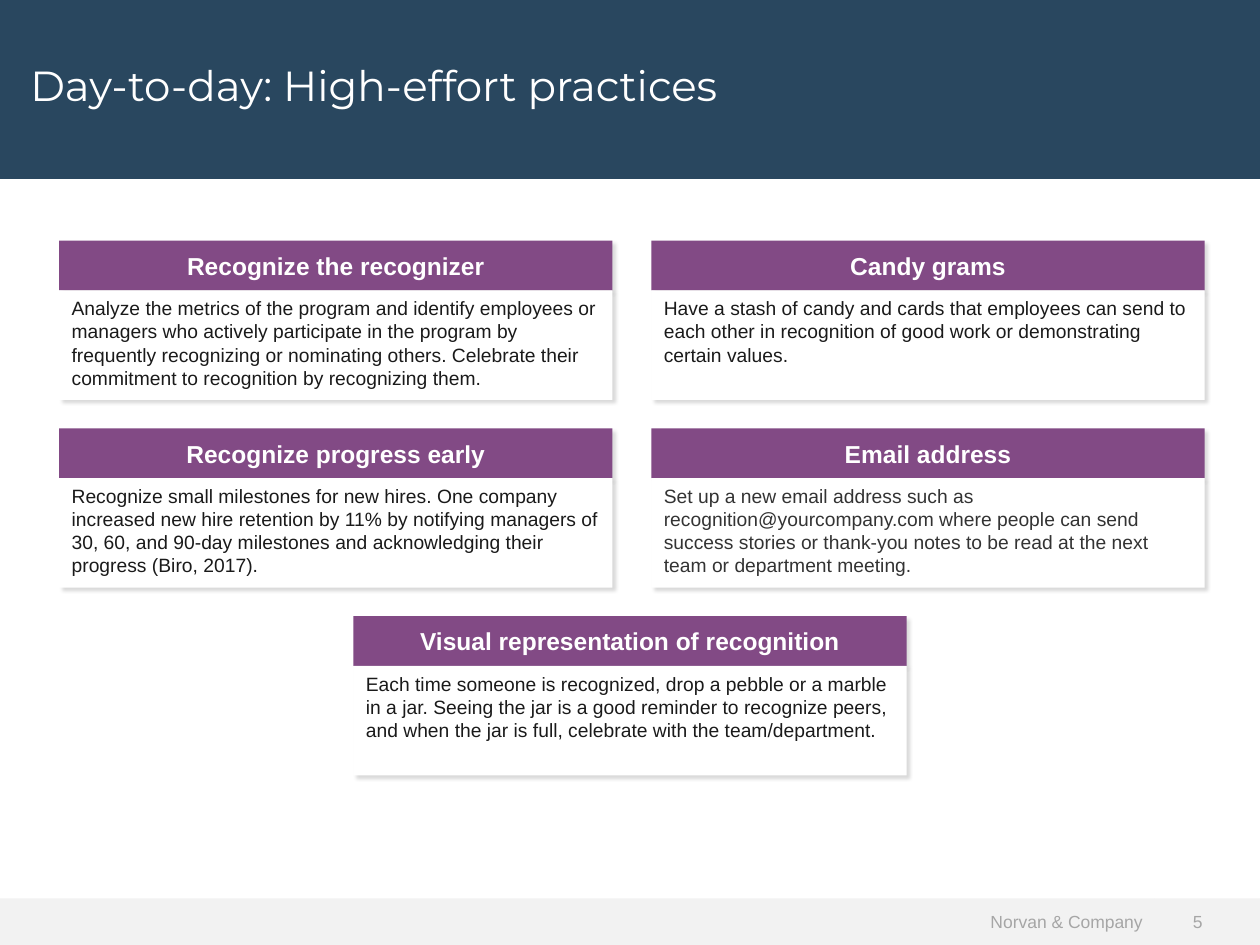
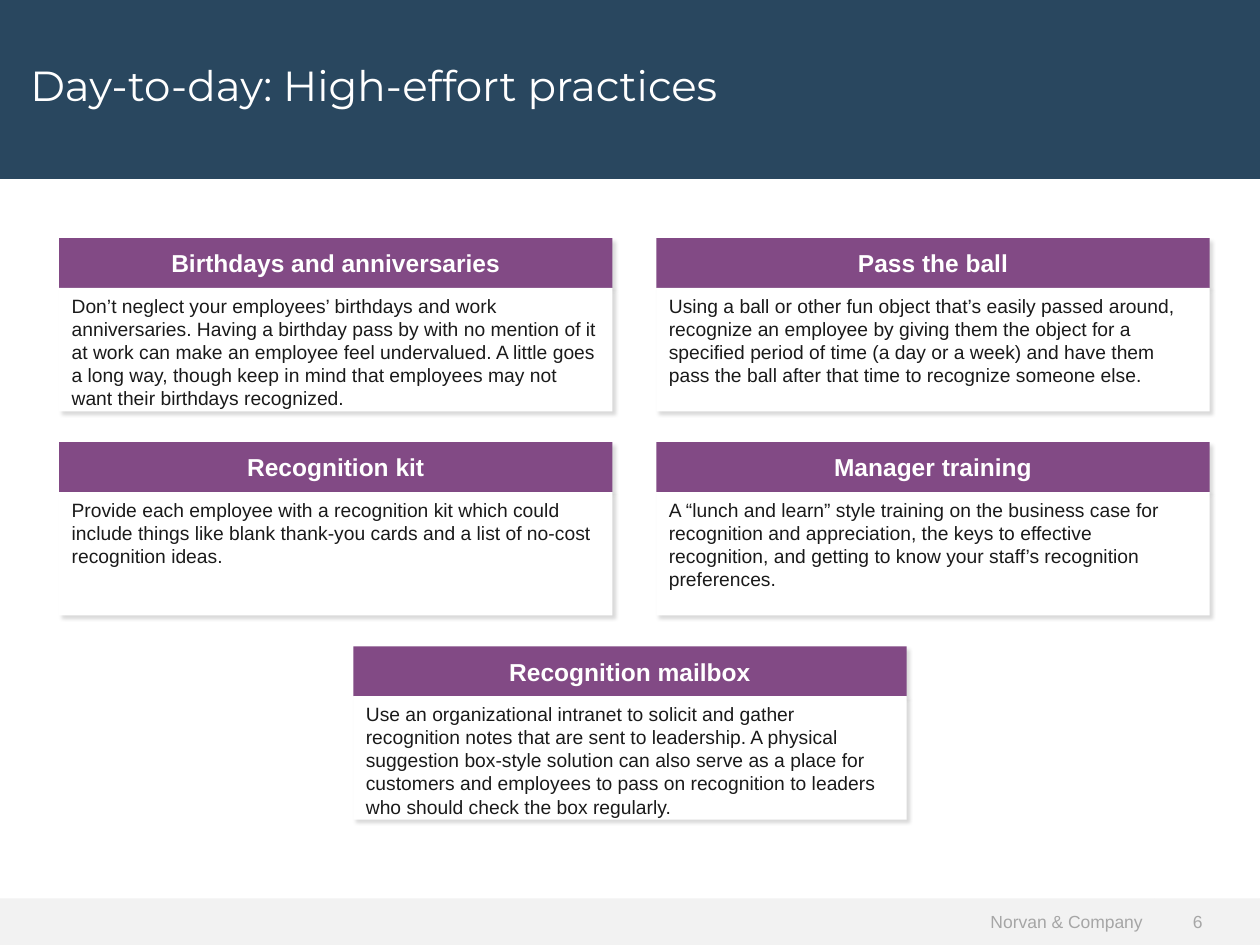
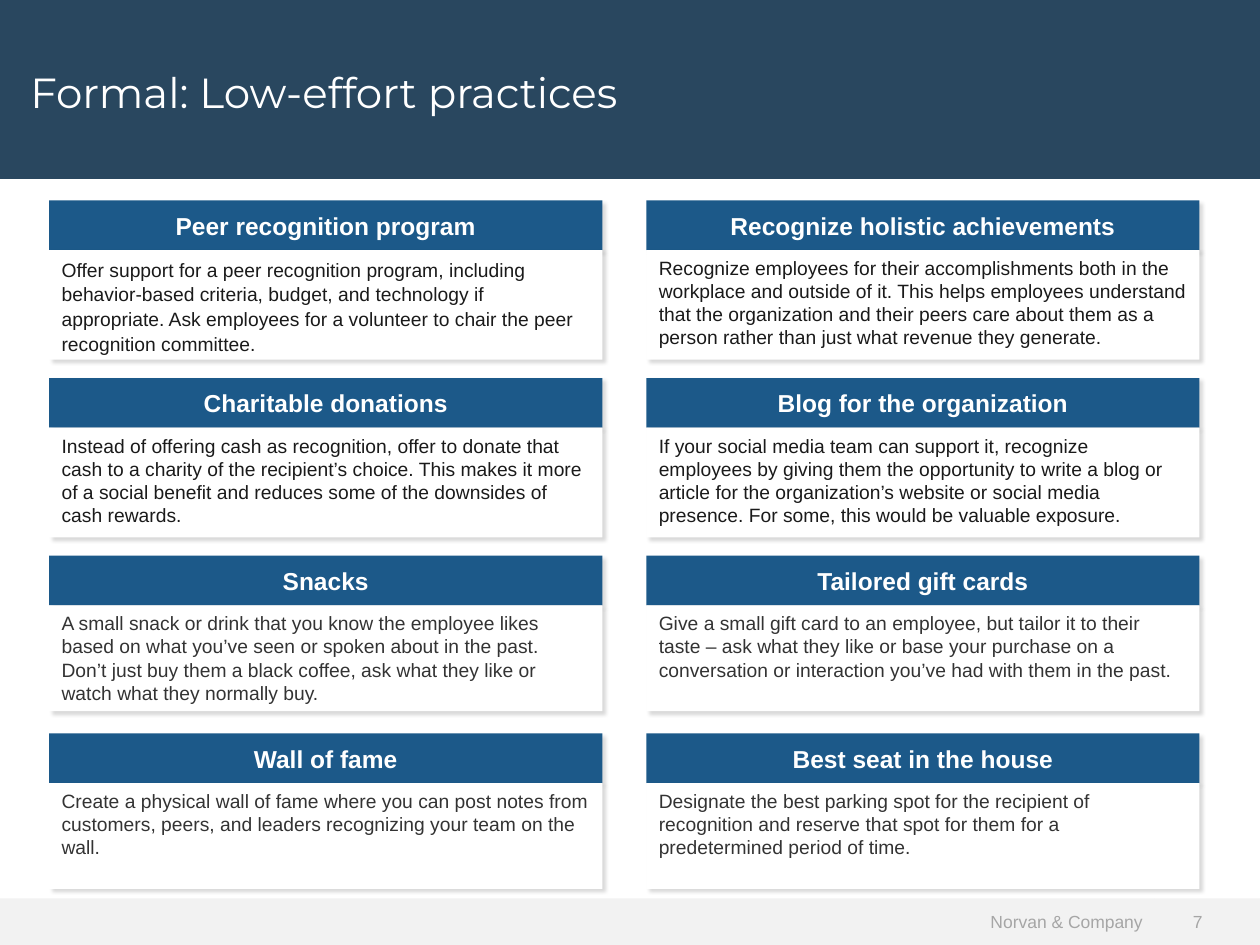
from dataclasses import dataclass

from lxml import etree
from pptx import Presentation
from pptx.dml.color import RGBColor
from pptx.enum.shapes import MSO_SHAPE
from pptx.enum.text import MSO_ANCHOR, MSO_AUTO_SIZE, PP_ALIGN
from pptx.oxml.ns import qn
from pptx.util import Inches, Pt

RECTANGLE = MSO_SHAPE.RECTANGLE
LEFT, CENTER, RIGHT = PP_ALIGN.LEFT, PP_ALIGN.CENTER, PP_ALIGN.RIGHT
TOP, MIDDLE = MSO_ANCHOR.TOP, MSO_ANCHOR.MIDDLE

COLORS = {
    "band": "29475F",
    "day_to_day": "824A85",
    "formal": "1C5989",
    "white": "FFFFFF",
    "footer": "F2F2F2",
    "footer_text": "A6A6A6",
    "ink": "1A1A1A",
    "soft_ink": "333333",
    "shadow": "000000",
}
TITLE_FONT, BODY_FONT = "Montserrat", "Arial"

SLIDE_WIDTH, SLIDE_HEIGHT = 10, 7.5
BAND_HEIGHT = 1.42
FOOTER_HEIGHT = 0.37
NUMBER_WIDTH = SLIDE_WIDTH / 12
CARD_WIDTH, HEADING_HEIGHT = 4.39, 0.395
FIRST_PAGE = 5
COMPANY = "Norvan & Company"


@dataclass
class Card:
    heading: str
    body: str
    ink: str = "ink"
    line_spacing: float = 1.0


@dataclass
class CardGrid:
    """Two columns of cards; an odd last card is centred on the slide."""
    left: float
    gap: float
    top: float
    pitch: float
    body_heights: tuple

    def place(self, index, count):
        row, column = divmod(index, 2)
        left = self.left + column * (CARD_WIDTH + self.gap)
        if index == count - 1 and column == 0:
            left = (SLIDE_WIDTH - CARD_WIDTH) / 2
        return left, self.top + row * self.pitch, self.body_heights[row]


@dataclass
class Page:
    title: str
    title_top: float
    accent: str
    grid: CardGrid
    cards: list


PAGES = [
    Page("Day-to-day: High-effort practices", 0.47, "day_to_day",
         CardGrid(0.47, 0.31, 1.91, 1.49, (0.87,) * 3), [
             Card("Recognize the recognizer",
                  "Analyze the metrics of the program and identify employees or managers who "
                  "actively participate in the program by frequently recognizing or nominating "
                  "others. Celebrate their commitment to recognition by recognizing them."),
             Card("Candy grams",
                  "Have a stash of candy and cards that employees can send to each other in "
                  "recognition of good work or demonstrating certain values."),
             Card("Recognize progress early",
                  "Recognize small milestones for new hires. One company increased new hire "
                  "retention by 11% by notifying managers of 30, 60, and 90-day milestones and "
                  "acknowledging their progress (Biro, 2017)."),
             Card("Email address",
                  "Set up a new email address such as recognition@yourcompany.com where people "
                  "can send success stories or thank-you notes to be read at the next team or "
                  "department meeting.", "soft_ink"),
             Card("Visual representation of recognition",
                  "Each time someone is recognized, drop a pebble or a marble in a jar. Seeing "
                  "the jar is a good reminder to recognize peers, and when the jar is full, "
                  "celebrate with the team/department."),
         ]),
    Page("Day-to-day: High-effort practices", 0.47, "day_to_day",
         CardGrid(0.47, 0.35, 1.89, 1.62, (0.98,) * 3), [
             Card("Birthdays and anniversaries",
                  "Don’t neglect your employees’ birthdays and work anniversaries. Having a "
                  "birthday pass by with no mention of it at work can make an employee feel "
                  "undervalued. A little goes a long way, though keep in mind that employees "
                  "may not want their birthdays recognized."),
             Card("Pass the ball",
                  "Using a ball or other fun object that’s easily passed around, recognize an "
                  "employee by giving them the object for a specified period of time (a day or "
                  "a week) and have them pass the ball after that time to recognize someone "
                  "else."),
             Card("Recognition kit",
                  "Provide each employee with a recognition kit which could include things like "
                  "blank thank-you cards and a list of no-cost recognition ideas."),
             Card("Manager training",
                  "A “lunch and learn” style training on the business case for recognition and "
                  "appreciation, the keys to effective recognition, and getting to know your "
                  "staff’s recognition preferences."),
             Card("Recognition mailbox",
                  "Use an organizational intranet to solicit and gather recognition notes that "
                  "are sent to leadership. A physical suggestion box-style solution can also "
                  "serve as a place for customers and employees to pass on recognition to "
                  "leaders who should check the box regularly."),
         ]),
    Page("Formal: Low-effort practices", 0.53, "formal",
         CardGrid(0.39, 0.35, 1.59, 1.41, (0.87, 0.87, 0.84, 0.84)), [
             Card("Peer recognition program",
                  "Offer support for a peer recognition program, including behavior-based "
                  "criteria, budget, and technology if appropriate. Ask employees for a "
                  "volunteer to chair the peer recognition committee.", line_spacing=1.07),
             Card("Recognize holistic achievements",
                  "Recognize employees for their accomplishments both in the workplace and "
                  "outside of it. This helps employees understand that the organization and "
                  "their peers care about them as a person rather than just what revenue they "
                  "generate."),
             Card("Charitable donations",
                  "Instead of offering cash as recognition, offer to donate that cash to a "
                  "charity of the recipient’s choice. This makes it more of a social benefit "
                  "and reduces some of the downsides of cash rewards."),
             Card("Blog for the organization",
                  "If your social media team can support it, recognize employees by giving them "
                  "the opportunity to write a blog or article for the organization’s website or "
                  "social media presence. For some, this would be valuable exposure."),
             Card("Snacks",
                  "A small snack or drink that you know the employee likes based on what you’ve "
                  "seen or spoken about in the past. Don’t just buy them a black coffee, ask "
                  "what they like or watch what they normally buy.", "soft_ink"),
             Card("Tailored gift cards",
                  "Give a small gift card to an employee, but tailor it to their taste – ask "
                  "what they like or base your purchase on a conversation or interaction you’ve "
                  "had with them in the past.", "soft_ink"),
             Card("Wall of fame",
                  "Create a physical wall of fame where you can post notes from customers, "
                  "peers, and leaders recognizing your team on the wall.", "soft_ink"),
             Card("Best seat in the house",
                  "Designate the best parking spot for the recipient of recognition and reserve "
                  "that spot for them for a predetermined period of time.", "soft_ink"),
         ]),
]


def color(name):
    return RGBColor.from_string(COLORS[name])


def fill_shape(shape, name):
    shape.fill.solid()
    shape.fill.fore_color.rgb = color(name)


def write(shape, text, size, ink, align=LEFT, anchor=TOP, font=BODY_FONT, bold=False):
    frame = shape.text_frame
    frame.word_wrap = True
    frame.auto_size = MSO_AUTO_SIZE.NONE
    frame.vertical_anchor = anchor
    para = frame.paragraphs[0]
    para.alignment = align
    span = para.add_run()
    span.text = text
    span.font.name, span.font.size, span.font.bold = font, Pt(size), bold
    span.font.color.rgb = color(ink)
    return para


def add_panel(shapes, left, top, width, height, fill):
    panel = shapes.add_shape(RECTANGLE, *map(Inches, (left, top, width, height)))
    panel.shadow.inherit = False
    panel.line.fill.background()
    fill_shape(panel, fill)
    return panel


def cast_shadow(shape):
    effects = shape._element.spPr.find(qn("a:effectLst"))
    shadow = etree.SubElement(effects, qn("a:outerShdw"), blurRad=str(Pt(2)), dist=str(Pt(2)),
                              dir=str(45 * 60000), algn="tl", rotWithShape="0")
    tint = etree.SubElement(shadow, qn("a:srgbClr"), val=COLORS["shadow"])
    etree.SubElement(tint, qn("a:alpha"), val="15000")


def add_footer(slide, number):
    top = SLIDE_HEIGHT - FOOTER_HEIGHT
    split = SLIDE_WIDTH - NUMBER_WIDTH
    company = add_panel(slide.shapes, 0, top, split, FOOTER_HEIGHT, "footer")
    write(company, COMPANY, 10, "footer_text", RIGHT, MIDDLE)
    counter = add_panel(slide.shapes, split, top, NUMBER_WIDTH, FOOTER_HEIGHT, "footer")
    counter.text_frame.margin_left = Inches(0.3)
    write(counter, str(number), 10, "footer_text", LEFT, MIDDLE)


def set_title(slide, text, text_top):
    title = slide.shapes.title
    title.left, title.top = 0, 0
    title.width, title.height = Inches(SLIDE_WIDTH), Inches(BAND_HEIGHT)
    fill_shape(title, "band")
    title.text_frame.margin_left = Inches(0.24)
    title.text_frame.margin_top = Inches(text_top)
    write(title, text, 24, "white", font=TITLE_FONT)


def add_card(slide, card, accent, left, top, body_height):
    group = slide.shapes.add_group_shape()
    heading = add_panel(group.shapes, left, top, CARD_WIDTH, HEADING_HEIGHT, accent)
    write(heading, card.heading, 14, "white", CENTER, MIDDLE, bold=True)
    body = add_panel(group.shapes, left, top + HEADING_HEIGHT, CARD_WIDTH, body_height, "white")
    write(body, card.body, 11, card.ink).line_spacing = card.line_spacing
    for panel in (heading, body):
        cast_shadow(panel)


def main():
    deck = Presentation()
    deck.slide_width, deck.slide_height = Inches(SLIDE_WIDTH), Inches(SLIDE_HEIGHT)
    title_only = deck.slide_layouts.get_by_name("Title Only")
    for number, page in enumerate(PAGES, FIRST_PAGE):
        slide = deck.slides.add_slide(title_only)
        set_title(slide, page.title, page.title_top)
        add_footer(slide, number)
        for index, card in enumerate(page.cards):
            add_card(slide, card, page.accent, *page.grid.place(index, len(page.cards)))
    deck.save("out.pptx")


if __name__ == "__main__":
    main()
